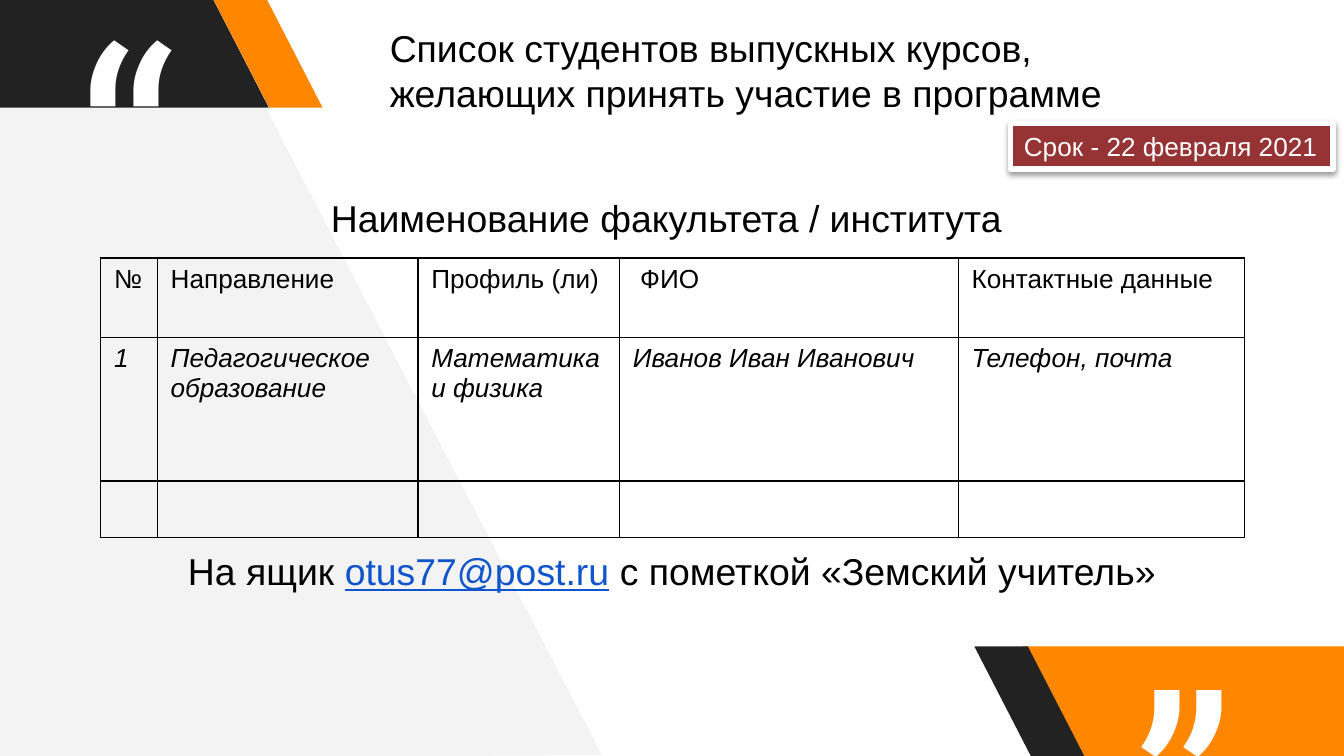
from lxml import etree
from pptx import Presentation
from pptx import util as u
from pptx.dml.color import RGBColor
from pptx.enum import shapes, text
from pptx.oxml import parse_xml
from pptx.oxml.ns import nsdecls, qn

BLACK, WHITE, DARK, ORANGE = "000000", "FFFFFF", "222222", "FF8700"


def rgb(value):
    return RGBColor.from_string(value)


def box(*lengths):
    return [u.Inches(length) for length in lengths]


class SlideBuilder:
    font = "Arial"
    heading_size = 20
    body_size = 14

    def __init__(self, slide):
        self.slide = slide

    def format_runs(self, paragraph, size, color=BLACK, font=None, italic=False):
        for run in paragraph.runs:
            run.font.name = font or self.font
            run.font.size = u.Pt(size)
            run.font.italic = italic
            run.font.color.rgb = rgb(color)

    def paint(self, shape, color):
        shape.shadow.inherit = False
        shape.fill.solid()
        shape.fill.fore_color.rgb = rgb(color)
        shape.line.fill.background()

    def polygon(self, points, color):
        corners = [box(*point) for point in points]
        outline = self.slide.shapes.build_freeform(*corners[0])
        outline.add_line_segments(corners[1:], close=True)
        self.paint(outline.convert_to_shape(), color)

    def slant(self, left, top, width, color):
        band = self.slide.shapes.add_shape(
            shapes.MSO_SHAPE.PARALLELOGRAM, *box(left, top, width, 0.82))
        band.adjustments[0] = 0.515
        band._element.spPr.find(qn("a:xfrm")).set("flipH", "1")
        self.paint(band, color)

    def title(self, wording, *place):
        title = self.slide.shapes.title
        title.left, title.top, title.width, title.height = box(*place)
        frame = title.text_frame
        frame.text = wording
        frame.word_wrap = True
        frame.auto_size = text.MSO_AUTO_SIZE.NONE
        frame.vertical_anchor = text.MSO_ANCHOR.TOP
        frame.paragraphs[0].alignment = text.PP_ALIGN.LEFT
        self.format_runs(frame.paragraphs[0], self.heading_size)

    def centred(self, parts, *place, size=None, color=BLACK, font=None, inset=0.05):
        frame = self.slide.shapes.add_textbox(*box(*place)).text_frame
        frame.word_wrap = True
        frame.margin_top = frame.margin_bottom = u.Inches(inset)
        line = frame.paragraphs[0]
        line.alignment = text.PP_ALIGN.CENTER
        for part in parts:
            line.add_run().text = part
        self.format_runs(line, size or self.heading_size, color, font)
        return line

    def quote_mark(self, mark, *place):
        self.centred([mark], *place, size=150, color=WHITE, font="Roboto", inset=0.1)

    def badge(self, wording, *place):
        badge = self.slide.shapes.add_shape(shapes.MSO_SHAPE.RECTANGLE, *box(*place))
        self.paint(badge, "963334")
        badge.line.color.rgb = rgb(WHITE)
        badge.line.width = u.Pt(3)
        # Soft shadow straight below
        effects = badge._element.spPr.find(qn("a:effectLst"))
        effects.append(parse_xml(
            f'<a:outerShdw {nsdecls("a")} blurRad="{u.Pt(3.1)}" dist="{u.Pt(1.6)}" '
            'dir="5400000" rotWithShape="0"><a:srgbClr val="000000">'
            '<a:alpha val="38000"/></a:srgbClr></a:outerShdw>'))
        frame = badge.text_frame
        frame.text = wording
        frame.word_wrap = False
        frame.paragraphs[0].alignment = text.PP_ALIGN.LEFT
        self.format_runs(frame.paragraphs[0], self.body_size, WHITE)

    def border(self, cell):
        properties = cell._tc.get_or_add_tcPr()
        for index, side in enumerate(("lnL", "lnR", "lnT", "lnB")):
            edge = etree.Element(qn(f"a:{side}"), w=str(u.Pt(0.75)))
            fill = etree.SubElement(edge, qn("a:solidFill"))
            etree.SubElement(fill, qn("a:srgbClr"), val=BLACK)
            properties.insert(index, edge)

    def table(self, rows, widths, heights, left, top):
        table = self.slide.shapes.add_table(
            len(heights), len(widths),
            *box(left, top, sum(widths), sum(heights))).table
        table.first_row = table.horz_banding = False
        for column, width in zip(table.columns, widths):
            column.width = u.Inches(width)
        for r, height in enumerate(heights):
            table.rows[r].height = u.Inches(height)
            for c in range(len(widths)):
                cell = table.cell(r, c)
                cell.fill.background()
                self.border(cell)
                if r < len(rows):
                    cell.text_frame.text = rows[r][c]
                    self.format_runs(cell.text_frame.paragraphs[0],
                                     self.body_size, italic=r > 0)


def main():
    deck = Presentation()
    # Widescreen, 16:9
    deck.slide_width, deck.slide_height = box(10, 10 * 9 / 16)
    page = SlideBuilder(deck.slides.add_slide(deck.slide_layouts[5]))

    # Background and corner decoration
    page.polygon([(4.48, 5.62), (1.54, -0.04), (-0.05, -0.02), (-0.02, 5.64)], "F3F3F3")
    page.slant(-0.71, -0.02, 2.71, DARK)
    page.quote_mark("“", -0.13, -0.3, 2.14, 0.71)
    page.slant(1.58, -0.02, 0.82, ORANGE)
    page.slant(7.61, 4.81, 2.89, ORANGE)
    page.quote_mark("”", 7.61, 4.52, 2.39, 0.71)
    page.slant(7.25, 4.81, 0.82, DARK)

    # Title
    page.title("Список студентов выпускных курсов, желающих принять участие в программе",
               2.8, 0.14, 5.75, 0.77)

    # Student list
    students = [
        ["№", "Направление", "Профиль (ли)", " ФИО", "Контактные данные"],
        ["1", "Педагогическое образование", "Математика и физика",
         "Иванов Иван Иванович", "Телефон, почта"],
    ]
    page.table(students, [0.42, 1.94, 1.5, 2.52, 2.13], [0.59, 1.07, 0.42], 0.75, 1.92)

    # Deadline
    page.badge("Срок - 22 февраля 2021", 7.52, 0.92, 2.4, 0.34)

    # Mailbox line and table heading
    mailbox = page.centred(["На ящик ", "otus77@post.ru", " c пометкой «Земский учитель»"],
                           0, 4.03, 10, 0.44)
    address = mailbox.runs[1].font
    address.color.rgb = rgb("1155CC")
    address.underline = True
    page.centred(["Наименование факультета / института"], -0.04, 1.4, 10, 0.44)

    deck.save("out.pptx")


if __name__ == "__main__":
    main()
